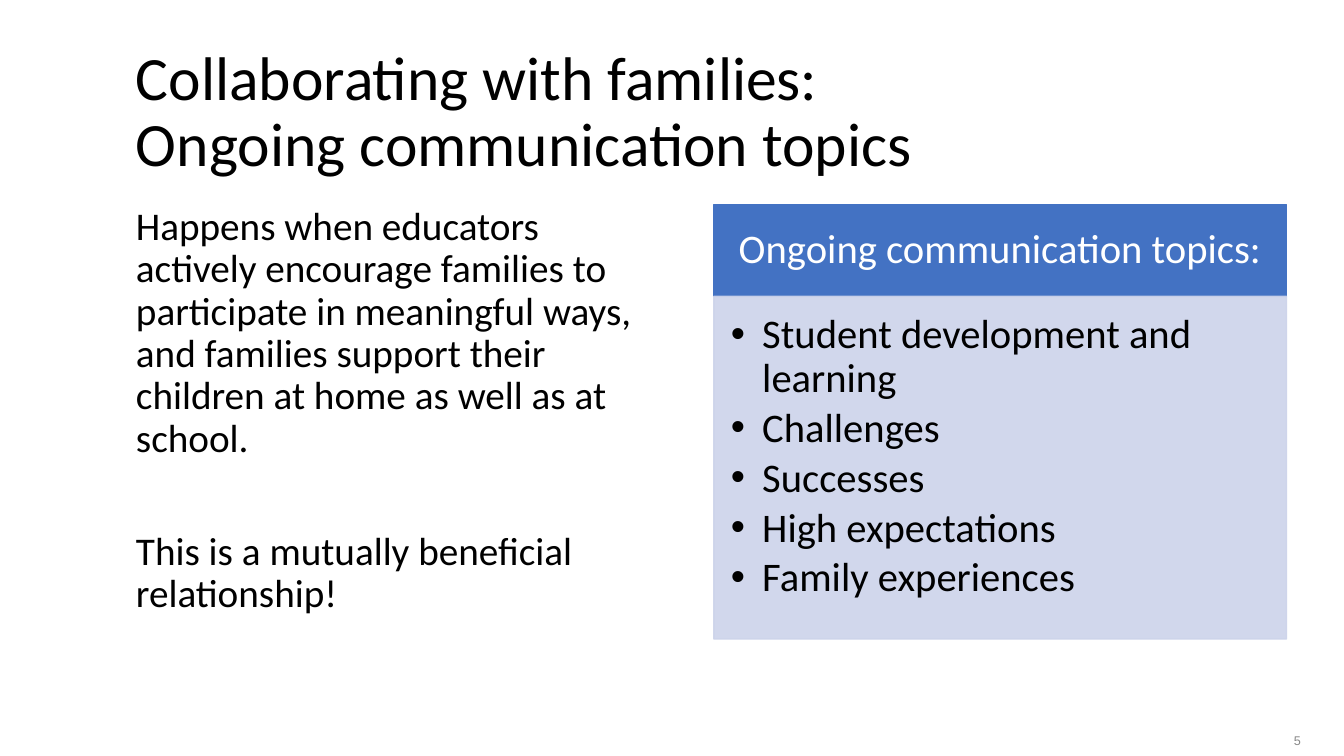
from lxml import etree
from pptx import Presentation
from pptx.dml.color import RGBColor
from pptx.enum import shapes, text
from pptx.oxml import ns
from pptx.util import Inches, Pt

BLACK = RGBColor(0x00, 0x00, 0x00)
WHITE = RGBColor(0xFF, 0xFF, 0xFF)
GRAY = RGBColor(0x88, 0x88, 0x88)
BLUE = RGBColor(0x43, 0x72, 0xC3)
PALE_BLUE = RGBColor(0xCC, 0xD3, 0xEA)

prs = Presentation()
prs.slide_width, prs.slide_height = Inches(13.33), Inches(7.5)
s = prs.slides.add_slide(prs.slide_layouts[6])


def add_text(sp, lines, size, color=BLACK, font="Calibri", spacing=0.9, before=0,
             align=text.PP_ALIGN.LEFT, anchor=text.MSO_ANCHOR.TOP,
             margins=(0.1, 0.05, 0.1, 0.05)):
    tf = sp.text_frame
    tf.word_wrap = True
    tf.vertical_anchor = anchor
    tf.margin_left, tf.margin_top, tf.margin_right, tf.margin_bottom = map(Inches, margins)
    tf.text = "\n".join(lines)
    for i, p in enumerate(tf.paragraphs):
        p.alignment = align
        p.line_spacing = spacing
        p.space_before = Pt(before if i else 0)
        for r in p.runs:
            r.font.size = Pt(size)
            r.font.name = font
            r.font.color.rgb = color
    return tf


def add_panel(top, height, color):
    sp = s.shapes.add_shape(shapes.MSO_SHAPE.RECTANGLE, Inches(7.08), Inches(top),
                            Inches(5.68), Inches(height))
    sp.shadow.inherit = False
    sp.fill.solid()
    sp.fill.fore_color.rgb = color
    sp.line.color.rgb = color
    sp.line.width = Pt(1)
    return sp


# Title
title = s.shapes.add_textbox(Inches(1.25), Inches(0.4), Inches(11.16), Inches(1.45))
add_text(title, ["Collaborating with families: \vOngoing communication topics"], 44,
         anchor=text.MSO_ANCHOR.MIDDLE)

# Left column, with one line's height between the paragraphs
body = s.shapes.add_textbox(Inches(1.25), Inches(2), Inches(5.41), Inches(4.52))
add_text(body, [
    "Happens when educators actively encourage families to participate in "
    "meaningful ways, and families support their children at home as well as at school.",
    "This is a mutually beneficial relationship!",
], 28, before=50.5)

# Topics header
header = add_panel(2.03, 0.91, BLUE)
add_text(header, ["Ongoing communication topics:"], 29, color=WHITE,
         align=text.PP_ALIGN.CENTER, anchor=text.MSO_ANCHOR.MIDDLE,
         margins=(0.2, 0.13, 0.2, 0.13))

# Topics list on a slightly transparent panel
panel = add_panel(2.94, 3.4, PALE_BLUE)
for clr in panel.element.spPr.iter(ns.qn("a:srgbClr")):
    etree.SubElement(clr, ns.qn("a:alpha"), val="89000")
topics = add_text(panel, [
    "Student development and learning",
    "Challenges",
    "Successes",
    "High expectations",
    "Family experiences",
], 29, before=4.3, margins=(0.17, 0.17, 0.23, 0.25))
for p in topics.paragraphs:
    pPr = p._p.get_or_add_pPr()
    pPr.set("marL", str(Inches(0.31)))
    pPr.set("indent", str(-Inches(0.31)))
    etree.SubElement(pPr, ns.qn("a:buFont"), typeface="Arial")
    etree.SubElement(pPr, ns.qn("a:buChar"), char="•")

# Slide number
number = s.shapes.add_textbox(Inches(11.72), Inches(7.12), Inches(1.28), Inches(0.35))
add_text(number, ["5"], 9, color=GRAY, font="Arial", spacing=1.0,
         align=text.PP_ALIGN.RIGHT, anchor=text.MSO_ANCHOR.BOTTOM)

prs.save("out.pptx")
